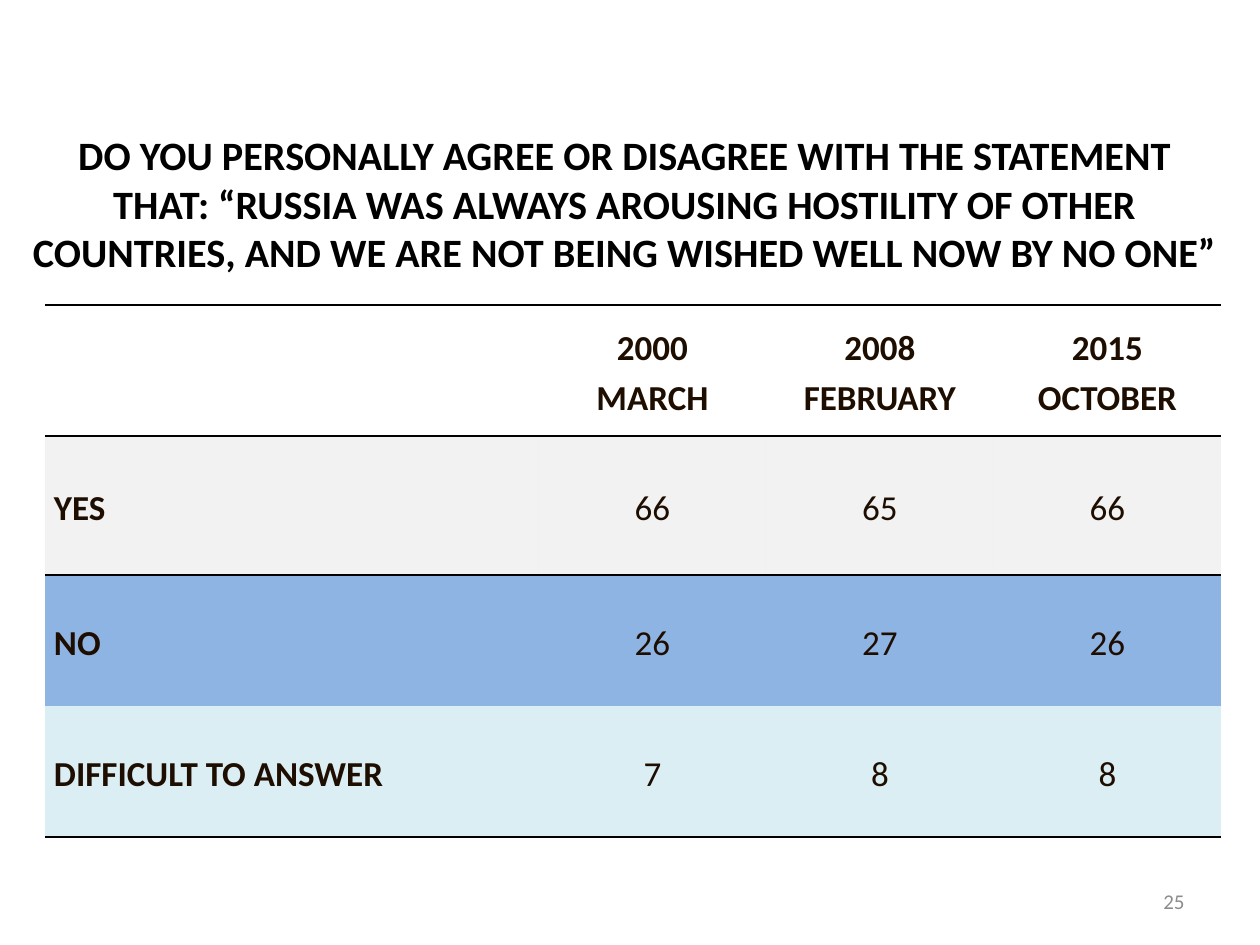
"""Build a slide with a survey question and a table of answers by year."""
from lxml import etree
from pptx import Presentation
from pptx import util as u
from pptx.dml.color import RGBColor
from pptx.enum import text as t
from pptx.oxml import ns

TITLE = ("DO YOU PERSONALLY AGREE OR DISAGREE WITH THE STATEMENT THAT: “RUSSIA WAS ALWAYS "
         "AROUSING HOSTILITY OF OTHER COUNTRIES, AND WE ARE NOT BEING WISHED WELL NOW BY NO ONE”")
PAGE = "25"
HEADER = ["", "2000\nMARCH", "2008\nFEBRUARY", "2015\nOCTOBER"]
ANSWERS = [
    ("YES", 66, 65, 66),
    ("NO", 26, 27, 26),
    ("DIFFICULT TO ANSWER", 7, 8, 8),
]
COLORS = {"black": "000000", "text": "1E0E01", "page": "8C8C8C",
          "yes": "BFBFBF", "no": "8EB4E3", "difficult": "DBEEF4"}
ROW_FILLS = [None, "yes", "no", "difficult"]
ROW_ALPHA = {"yes": 20}
ROW_BORDERS = [("lnT", "lnB"), ("lnT",), (), ("lnB",)]
ROW_SPACING = [(0, 0), (2, 3), (2, 3), (1, 1)]
COLUMNS = [494, 227, 228, 227]
ROWS = [131, 139, 131, 131]
TABLE_LEFT, TABLE_TOP = 45, 305
NO_STYLE = "{2D5ABB26-0587-4C30-8999-92F81FD0307C}"
CENTER, LEFT, RIGHT = t.PP_ALIGN.CENTER, t.PP_ALIGN.LEFT, t.PP_ALIGN.RIGHT


def px(value):
    return round(value * u.Inches(1) / 126)


def set_all(target, **values):
    for name, value in values.items():
        setattr(target, name, value)


def write(frame, content, size, color, bold, **paragraph_format):
    frame.text = content
    for paragraph in frame.paragraphs:
        set_all(paragraph, **paragraph_format)
        set_all(paragraph.font, name="Calibri", size=u.Pt(size), bold=bold)
        paragraph.font.color.rgb = RGBColor.from_string(COLORS[color])


def add_text(slide, box, content, **style):
    frame = slide.shapes.add_textbox(*map(px, box)).text_frame
    set_all(frame, word_wrap=True, vertical_anchor=t.MSO_ANCHOR.MIDDLE)
    write(frame, content, **style)


def fill_cell(cell, fill):
    if fill is None:
        cell.fill.background()
        return
    cell.fill.solid()
    cell.fill.fore_color.rgb = RGBColor.from_string(COLORS[fill])
    if fill in ROW_ALPHA:
        color = cell._tc.tcPr.find(".//" + ns.qn("a:srgbClr"))
        etree.SubElement(color, ns.qn("a:alpha"), val=str(ROW_ALPHA[fill] * 1000))


def add_borders(cell, sides):
    for index, side in enumerate(sides):
        line = etree.Element(ns.qn("a:" + side), w=str(u.Pt(1)))
        solid = etree.SubElement(line, ns.qn("a:solidFill"))
        etree.SubElement(solid, ns.qn("a:srgbClr"), val=COLORS["black"])
        cell._tc.tcPr.insert(index, line)


def add_answer_table(slide):
    frame = slide.shapes.add_table(len(ROWS), len(COLUMNS), px(TABLE_LEFT), px(TABLE_TOP),
                                   px(sum(COLUMNS)), px(sum(ROWS)))
    table = frame.table
    set_all(table, first_row=False, horz_banding=False)
    table._tbl.tblPr.find(ns.qn("a:tableStyleId")).text = NO_STYLE
    for column, width in zip(table.columns, COLUMNS):
        column.width = px(width)
    for r, (height, values) in enumerate(zip(ROWS, [HEADER, *ANSWERS])):
        table.rows[r].height = px(height)
        for c, value in enumerate(values):
            cell = table.cell(r, c)
            set_all(cell, margin_left=px(9), margin_right=px(9), margin_top=0, margin_bottom=0,
                    vertical_anchor=t.MSO_ANCHOR.MIDDLE)
            before, after = (0, 0) if c == len(COLUMNS) - 1 else ROW_SPACING[r]
            write(cell.text_frame, str(value), 20, "text", r == 0 or c == 0,
                  alignment=CENTER if c else LEFT, line_spacing=1.15,
                  space_before=u.Pt(before), space_after=u.Pt(after))
            fill_cell(cell, ROW_FILLS[r])
            add_borders(cell, ROW_BORDERS[r])


def main():
    presentation = Presentation()
    set_all(presentation, slide_width=px(1260), slide_height=px(945))
    slide = presentation.slides.add_slide(presentation.slide_layouts[6])
    add_text(slide, (20, 119, 1211, 168), TITLE, size=23, color="black", bold=True,
             alignment=CENTER)
    add_text(slide, (903, 876, 294, 50), PAGE, size=12, color="page", bold=False,
             alignment=RIGHT)
    add_answer_table(slide)
    presentation.save("out.pptx")


if __name__ == "__main__":
    main()
